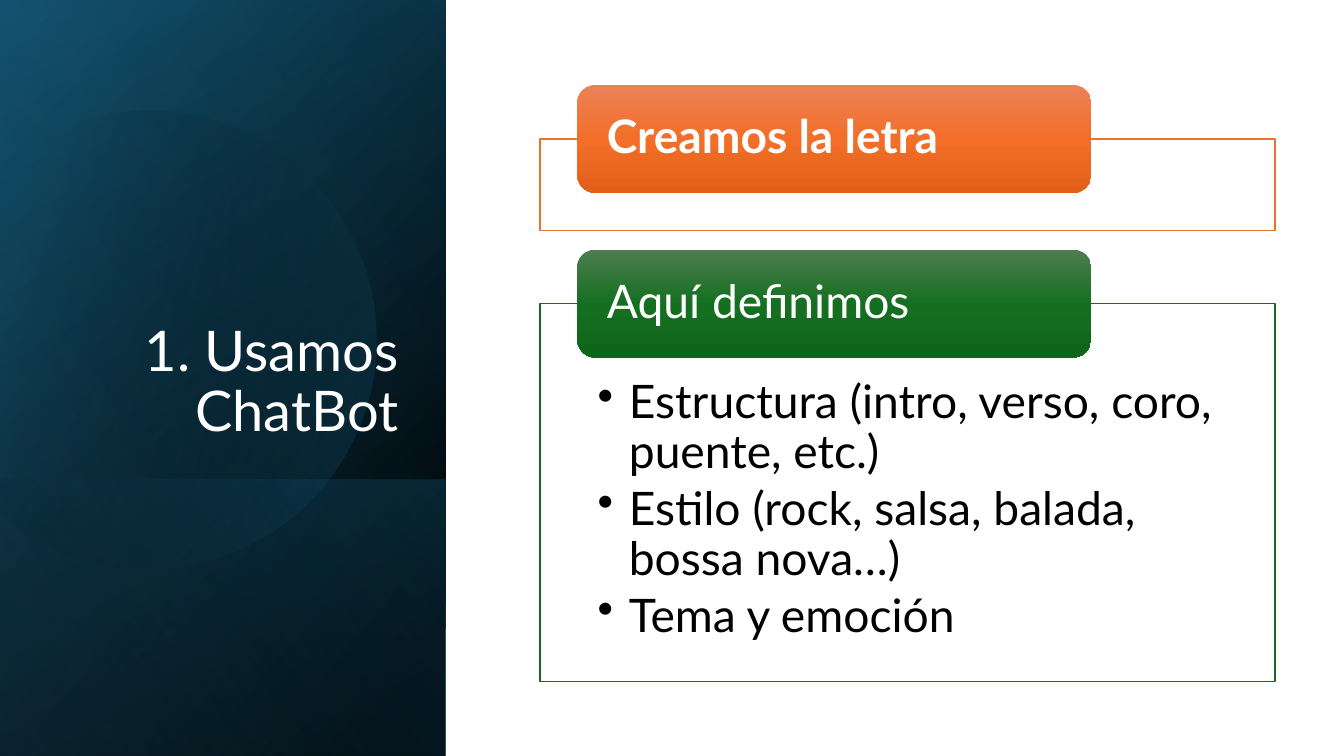
import math
from dataclasses import dataclass

from pptx import Presentation
from pptx.dml.color import RGBColor
from pptx.enum.shapes import MSO_SHAPE
from pptx.enum.text import MSO_ANCHOR, PP_ALIGN
from pptx.oxml import parse_xml
from pptx.oxml.ns import nsdecls, qn
from pptx.util import Cm, Pt

RECTANGLE = MSO_SHAPE.RECTANGLE
ROUNDED = MSO_SHAPE.ROUNDED_RECTANGLE
TOP, MIDDLE, BOTTOM = MSO_ANCHOR.TOP, MSO_ANCHOR.MIDDLE, MSO_ANCHOR.BOTTOM
LEFT, RIGHT = PP_ALIGN.LEFT, PP_ALIGN.RIGHT


@dataclass(frozen=True)
class Theme:
    font: str = "Lato"
    title_size: float = 40
    body_size: float = 33
    line_spacing: float = 0.9
    white: str = "FFFFFF"
    black: str = "000000"
    teal: str = "156082"
    deep_teal: str = "104862"
    sky: str = "46B1E1"
    orange: str = "E97132"
    green: str = "196B24"
    orange_blend: tuple = ("ED8257", "F26E29", "E25F1A")
    green_blend: tuple = ("4D7E50", "156F21", "0F661B")


THEME = Theme()

TITLE = "1. Usamos ChatBot"
SECTIONS = [
    {"heading": "Creamos la letra", "bold": True, "bullets": [],
     "top": 3.5, "height": 2.31, "line": THEME.orange, "blend": THEME.orange_blend},
    {"heading": "Aquí definimos", "bold": False,
     "bullets": [
         "Estructura (intro, verso, coro, puente, etc.)",
         "Estilo (rock, salsa, balada, bossa nova…)",
         "Tema y emoción",
     ],
     "top": 7.65, "height": 9.53, "line": THEME.green, "blend": THEME.green_blend},
]

# Lengths in centimetres; a gradient stop is (position, colour, opacity), in percent
SLIDE_WIDTH, SLIDE_HEIGHT = 33.87, 19.05
PANEL_WIDTH = 11.23
FOOT_HEIGHT = 6.96
BASE_LAYERS = [
    ([(8, THEME.black, 100), (100, THEME.deep_teal, 100)], 50),
    ([(0, THEME.black, 0), (99, THEME.teal, 46)], 30),
]
FOOT_LAYER = ([(2, THEME.teal, 29), (100, THEME.black, 30)], 130)
DISC_LAYER = ([(29, THEME.black, 0), (100, THEME.teal, 43)], 30)
SHEEN_LAYER = ([(0, THEME.black, 0), (99, THEME.sky, 11)], 120)
DISC_CENTER, DISC_RADIUS = (3.71, 8.46), 5.77
DISC_ARC, DISC_ROTATION = (-119, 151), -16.1

TITLE_BOX = (1.63, 4.67, 8.66, 6.65)
TITLE_INSETS = (0.25, 0.13, 0.25, 0.13)
FRAME_LEFT, FRAME_WIDTH = 13.61, 18.52
FRAME_INSETS = (1.45, 1.9, 1.45, 0.66)
HEADING_LEFT, HEADING_WIDTH, HEADING_HEIGHT = 14.55, 12.95, 2.72
HEADING_INSETS = (0.61, 0, 0.61, 0)
BULLET_INDENT = 0.79
BULLET_GAP = 5


def color(value):
    return RGBColor.from_string(value)


def fill_gradient(shape, stops, angle):
    """Fill with a linear gradient; the angle runs clockwise in degrees."""
    stop_xml = "".join(
        f'<a:gs pos="{position * 1000}"><a:srgbClr val="{value}">'
        f'<a:alpha val="{opacity * 1000}"/></a:srgbClr></a:gs>'
        for position, value, opacity in stops
    )
    gradient = parse_xml(
        f'<a:gradFill {nsdecls("a")} rotWithShape="1"><a:gsLst>{stop_xml}</a:gsLst>'
        f'<a:lin ang="{angle * 60000}" scaled="0"/></a:gradFill>'
    )
    shape.fill.background()
    properties = shape._element.spPr
    properties.replace(properties.find(qn("a:noFill")), gradient)
    shape.line.fill.background()
    shape.shadow.inherit = False


def add_box(slide, kind, left, top, width, height):
    shape = slide.shapes.add_shape(kind, Cm(left), Cm(top), Cm(width), Cm(height))
    shape.shadow.inherit = False
    return shape


def add_turned_layer(slide, top, height, layer):
    """Add a panel-wide rectangle that is mirrored and turned a quarter."""
    shift = (PANEL_WIDTH - height) / 2
    shape = add_box(slide, RECTANGLE, shift, top - shift, height, PANEL_WIDTH)
    shape.rotation = 90
    shape._element.spPr.find(qn("a:xfrm")).set("flipH", "1")
    fill_gradient(shape, *layer)


def add_disc(slide):
    """Add the circle cut off by a chord at its left."""
    first, last = DISC_ARC
    points = [
        (Cm(DISC_CENTER[0] + DISC_RADIUS * math.cos(math.radians(degree))),
         Cm(DISC_CENTER[1] + DISC_RADIUS * math.sin(math.radians(degree))))
        for degree in range(first, last + 1, 3)
    ]
    builder = slide.shapes.build_freeform(*points[0])
    builder.add_line_segments(points[1:], close=True)
    disc = builder.convert_to_shape()
    disc.rotation = DISC_ROTATION
    fill_gradient(disc, *DISC_LAYER)


def write_text(shape, lines, size, value, insets, anchor, align=LEFT, bold=False, bullets=False):
    frame = shape.text_frame
    frame.word_wrap = True
    frame.vertical_anchor = anchor
    frame.margin_left, frame.margin_top, frame.margin_right, frame.margin_bottom = map(Cm, insets)
    for index, line in enumerate(lines):
        paragraph = frame.paragraphs[0] if index == 0 else frame.add_paragraph()
        paragraph.text = line
        paragraph.alignment = align
        paragraph.line_spacing = THEME.line_spacing
        if bullets:
            paragraph.space_after = Pt(BULLET_GAP)
            properties = paragraph._p.get_or_add_pPr()
            properties.set("marL", str(Cm(BULLET_INDENT)))
            properties.set("indent", str(-Cm(BULLET_INDENT)))
            properties.append(parse_xml(f'<a:buChar {nsdecls("a")} char="•"/>'))
        paragraph.font.name = THEME.font
        paragraph.font.size = Pt(size)
        paragraph.font.bold = bold
        paragraph.font.color.rgb = color(value)


def add_section(slide, section):
    frame = add_box(slide, RECTANGLE, FRAME_LEFT, section["top"], FRAME_WIDTH, section["height"])
    frame.fill.solid()
    frame.fill.fore_color.rgb = color(THEME.white)
    frame.line.color.rgb = color(section["line"])
    frame.line.width = Pt(1)
    write_text(frame, section["bullets"], THEME.body_size, THEME.black,
               FRAME_INSETS, TOP, bullets=True)

    heading = add_box(slide, ROUNDED, HEADING_LEFT, section["top"] - HEADING_HEIGHT / 2,
                      HEADING_WIDTH, HEADING_HEIGHT)
    stops = [(index * 50, value, 100) for index, value in enumerate(section["blend"])]
    fill_gradient(heading, stops, 90)
    write_text(heading, [section["heading"]], THEME.body_size, THEME.white,
               HEADING_INSETS, MIDDLE, bold=section["bold"])


def main():
    presentation = Presentation()
    presentation.slide_width = Cm(SLIDE_WIDTH)
    presentation.slide_height = Cm(SLIDE_HEIGHT)
    slide = presentation.slides.add_slide(presentation.slide_layouts[6])

    for layer in BASE_LAYERS:
        add_turned_layer(slide, 0, SLIDE_HEIGHT, layer)
    add_turned_layer(slide, SLIDE_HEIGHT - FOOT_HEIGHT, FOOT_HEIGHT, FOOT_LAYER)
    add_disc(slide)
    add_turned_layer(slide, 0, SLIDE_HEIGHT, SHEEN_LAYER)

    title = slide.shapes.add_textbox(*map(Cm, TITLE_BOX))
    write_text(title, [TITLE], THEME.title_size, THEME.white, TITLE_INSETS, BOTTOM, RIGHT)
    for section in SECTIONS:
        add_section(slide, section)

    presentation.save("out.pptx")


if __name__ == "__main__":
    main()
